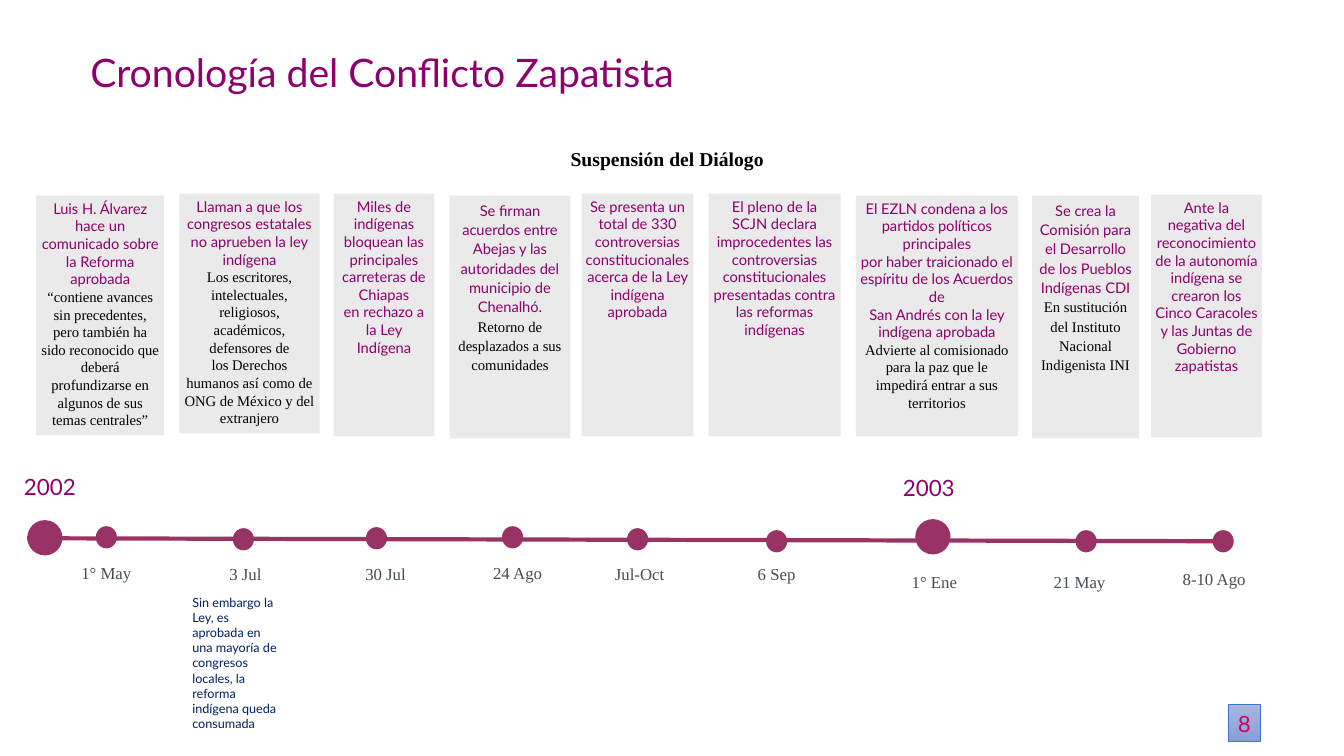
from dataclasses import dataclass

from lxml import etree
from pptx import Presentation
from pptx.dml.color import RGBColor
from pptx.enum.shapes import MSO_CONNECTOR, MSO_SHAPE
from pptx.enum.text import MSO_ANCHOR, PP_ALIGN
from pptx.oxml.ns import qn
from pptx.util import Inches, Pt

RECT, OVAL = MSO_SHAPE.RECTANGLE, MSO_SHAPE.OVAL
STRAIGHT = MSO_CONNECTOR.STRAIGHT
LEFT, CENTER = PP_ALIGN.LEFT, PP_ALIGN.CENTER
TOP, MIDDLE = MSO_ANCHOR.TOP, MSO_ANCHOR.MIDDLE

# Slide grid: 160 columns by 90 rows of square cells
COLUMNS, ROWS = 160, 90
CELL = Inches(1) // 12


@dataclass(frozen=True)
class Theme:
    sans: str = "Lato"
    serif: str = "Times New Roman"
    purple: str = "8E006C"
    plum: str = "993366"
    black: str = "000000"
    slate: str = "454D55"
    navy: str = "002060"
    magenta: str = "CC0066"
    card: str = "EAEAEA"
    badge_top: str = "A8B7DF"
    badge_bottom: str = "889ED7"
    badge_edge: str = "4472C4"
    title_size: float = 28
    year_size: float = 16
    heading_size: float = 14
    date_size: float = 12
    card_size: float = 10.5
    note_size: float = 9


THEME = Theme()


@dataclass(frozen=True)
class Box:
    left: float
    top: float
    width: float
    height: float

    @classmethod
    def around(cls, center: tuple[float, float], width: float, height: float) -> "Box":
        return cls(center[0] - width / 2, center[1] - height / 2, width, height)

    def emu(self) -> list[int]:
        return [round(n * CELL) for n in (self.left, self.top, self.width, self.height)]


@dataclass(frozen=True)
class Style:
    size: float
    font: str
    color: str
    bold: bool = False
    align: int = CENTER
    spacing: float = 1.0


@dataclass(frozen=True)
class Event:
    date: str
    dot: tuple[float, float]
    date_center: tuple[float, float]
    card: Box
    facts: tuple[str, ...]
    remarks: tuple[str, ...] = ()
    spacing: float = 1.0


@dataclass(frozen=True)
class Year:
    label: str
    dot: tuple[float, float]
    label_center: tuple[float, float]


EVENTS = [
    Event("1° May", (12.66, 63.96), (12.66, 68.34), Box(4.32, 23.28, 15.24, 28.56),
          ("Luis H. Álvarez hace un comunicado sobre la Reforma aprobada",),
          ("“contiene avances sin precedentes, pero también ha sido reconocido que deberá "
           "profundizarse en algunos de sus temas centrales”",)),
    Event("3 Jul", (28.98, 64.2), (29.22, 68.46), Box(21.36, 23.04, 16.68, 28.56),
          ("Llaman a que los congresos estatales no aprueben la ley", "indígena"),
          ("Los escritores, intelectuales, religiosos, académicos, defensores de",
           "los Derechos humanos así como de ONG de México y del extranjero")),
    Event("30 Jul", (44.82, 64.08), (45.9, 68.46), Box(39.72, 23.04, 12, 28.92),
          ("Miles de indígenas bloquean las principales carreteras de Chiapas",
           "en rechazo a la Ley Indígena")),
    Event("24 Ago", (61.02, 63.96), (61.62, 68.34), Box(53.52, 23.28, 14.4, 28.92),
          ("Se firman acuerdos entre Abejas y las autoridades del", "municipio de Chenalhó."),
          ("Retorno de desplazados a sus comunidades",), 1.1),
    Event("Jul-Oct", (75.9, 64.2), (76.14, 68.46), Box(69.24, 23.04, 13.32, 28.92),
          ("Se presenta un total de 330 controversias constitucionales acerca de la "
           "Ley indígena aprobada",)),
    Event("6 Sep", (92.46, 64.44), (92.46, 68.46), Box(84.36, 23.04, 15.72, 28.92),
          ("El pleno de la SCJN declara improcedentes las",
           "controversias constitucionales presentadas contra las reformas", "indígenas")),
    Event("1° Ene", (111.06, 63.9), (111.24, 69.36), Box(101.88, 23.28, 19.32, 28.68),
          ("El EZLN condena a los partidos políticos principales",
           "por haber traicionado el espíritu de los Acuerdos de",
           "San Andrés con la ley indígena aprobada"),
          ("Advierte al comisionado", "para la paz que le impedirá entrar a sus territorios")),
    Event("21 May", (129.3, 64.44), (128.52, 69.36), Box(122.88, 23.28, 12.72, 28.92),
          ("Se crea la Comisión para el Desarrollo de los Pueblos Indígenas CDI",),
          ("En sustitución del Instituto Nacional Indigenista INI",), 1.1),
    Event("8-10 Ago", (145.62, 64.44), (144.54, 69.06), Box(137.04, 23.16, 13.2, 28.92),
          ("Ante la negativa del reconocimiento de la autonomía indígena se crearon los "
           "Cinco Caracoles y las Juntas de Gobierno zapatistas",)),
]
YEARS = [
    Year("2002", (5.34, 64.02), (5.94, 58.14)),
    Year("2003", (111.06, 63.9), (110.58, 58.26)),
]


def write(shape, lines: list[tuple[str, Style]], anchor=TOP, inset: float | None = None) -> None:
    frame = shape.text_frame
    frame.word_wrap = True
    frame.vertical_anchor = anchor
    if inset is not None:
        frame.margin_left = frame.margin_right = round(inset * CELL)
        frame.margin_top = frame.margin_bottom = round(inset * CELL)
    frame.text = "\n".join(text for text, _ in lines)
    for paragraph, (_, style) in zip(frame.paragraphs, lines):
        paragraph.alignment = style.align
        paragraph.line_spacing = style.spacing
        font = paragraph.runs[0].font
        font.size, font.name, font.bold = Pt(style.size), style.font, style.bold
        font.color.rgb = RGBColor.from_string(style.color)


def add_label(slide, box: Box, lines: list[str], style: Style, anchor=TOP,
              inset: float | None = None) -> None:
    label = slide.shapes.add_textbox(*box.emu())
    write(label, [(line, style) for line in lines], anchor, inset)


def add_solid(slide, kind, box: Box, color: str):
    solid = slide.shapes.add_shape(kind, *box.emu())
    solid.shadow.inherit = False
    solid.fill.solid()
    solid.fill.fore_color.rgb = RGBColor.from_string(color)
    solid.line.fill.background()
    return solid


def add_axis(slide, start: tuple[float, float], end: tuple[float, float]) -> None:
    axis = slide.shapes.add_connector(STRAIGHT, *(round(n * CELL) for n in start + end))
    axis.line.color.rgb = RGBColor.from_string(THEME.plum)
    axis.line.width = Pt(3)
    etree.SubElement(axis._element.spPr, qn("a:effectLst"))


def add_event(slide, event: Event) -> None:
    fact = Style(THEME.card_size, THEME.sans, THEME.purple, spacing=event.spacing)
    remark = Style(THEME.card_size, THEME.serif, THEME.black, spacing=event.spacing)
    card = add_solid(slide, RECT, event.card, THEME.card)
    write(card, [(t, fact) for t in event.facts] + [(t, remark) for t in event.remarks],
          inset=0.48)
    if event.dot not in [year.dot for year in YEARS]:
        add_solid(slide, OVAL, Box.around(event.dot, 2.52, 2.64), THEME.plum)
    add_label(slide, Box.around(event.date_center, 10.68, 3.48), [event.date],
              Style(THEME.date_size, THEME.serif, THEME.slate, spacing=0.9), MIDDLE, 0)


def add_year(slide, year: Year) -> None:
    add_solid(slide, OVAL, Box.around(year.dot, 4.2, 4.2), THEME.plum)
    add_label(slide, Box.around(year.label_center, 8.76, 3.48), [year.label],
              Style(THEME.year_size, THEME.sans, THEME.purple, spacing=0.9), MIDDLE, 0)


def add_page_badge(slide, box: Box, number: str) -> None:
    badge = add_solid(slide, RECT, box, THEME.badge_top)
    badge.fill.gradient()
    badge.fill.gradient_angle = 270
    for stop, color in zip(badge.fill.gradient_stops, (THEME.badge_top, THEME.badge_bottom)):
        stop.color.rgb = RGBColor.from_string(color)
    badge.line.color.rgb = RGBColor.from_string(THEME.badge_edge)
    badge.line.width = Pt(0.5)
    write(badge, [(number, Style(THEME.year_size, THEME.sans, THEME.magenta))], MIDDLE, 0)


def main() -> None:
    deck = Presentation()
    deck.slide_width, deck.slide_height = COLUMNS * CELL, ROWS * CELL
    slide = deck.slides.add_slide(deck.slide_layouts[6])

    # Headings
    add_label(slide, Box(7.68, 5.76, 75.6, 6.84), ["Cronología del Conflicto Zapatista"],
              Style(THEME.title_size, THEME.sans, THEME.purple, spacing=0.9))
    add_label(slide, Box(61.68, 17.16, 35.52, 4.92), ["Suspensión del Diálogo"],
              Style(THEME.heading_size, THEME.serif, THEME.black, bold=True, spacing=0.9))

    # Timeline
    add_axis(slide, (3.24, 64.08), (146.76, 64.44))
    for event in EVENTS:
        add_event(slide, event)
    for year in YEARS:
        add_year(slide, year)

    # Outcome of the July event
    add_label(slide, Box(21.72, 70.2, 12.96, 17.52),
              ["Sin embargo la Ley, es aprobada en una mayoría de congresos locales, la",
               "reforma indígena queda consumada"],
              Style(THEME.note_size, THEME.sans, THEME.navy, align=LEFT))

    # Page number
    add_page_badge(slide, Box(146.28, 83.88, 3.72, 4.44), "8")
    deck.save("out.pptx")


if __name__ == "__main__":
    main()
